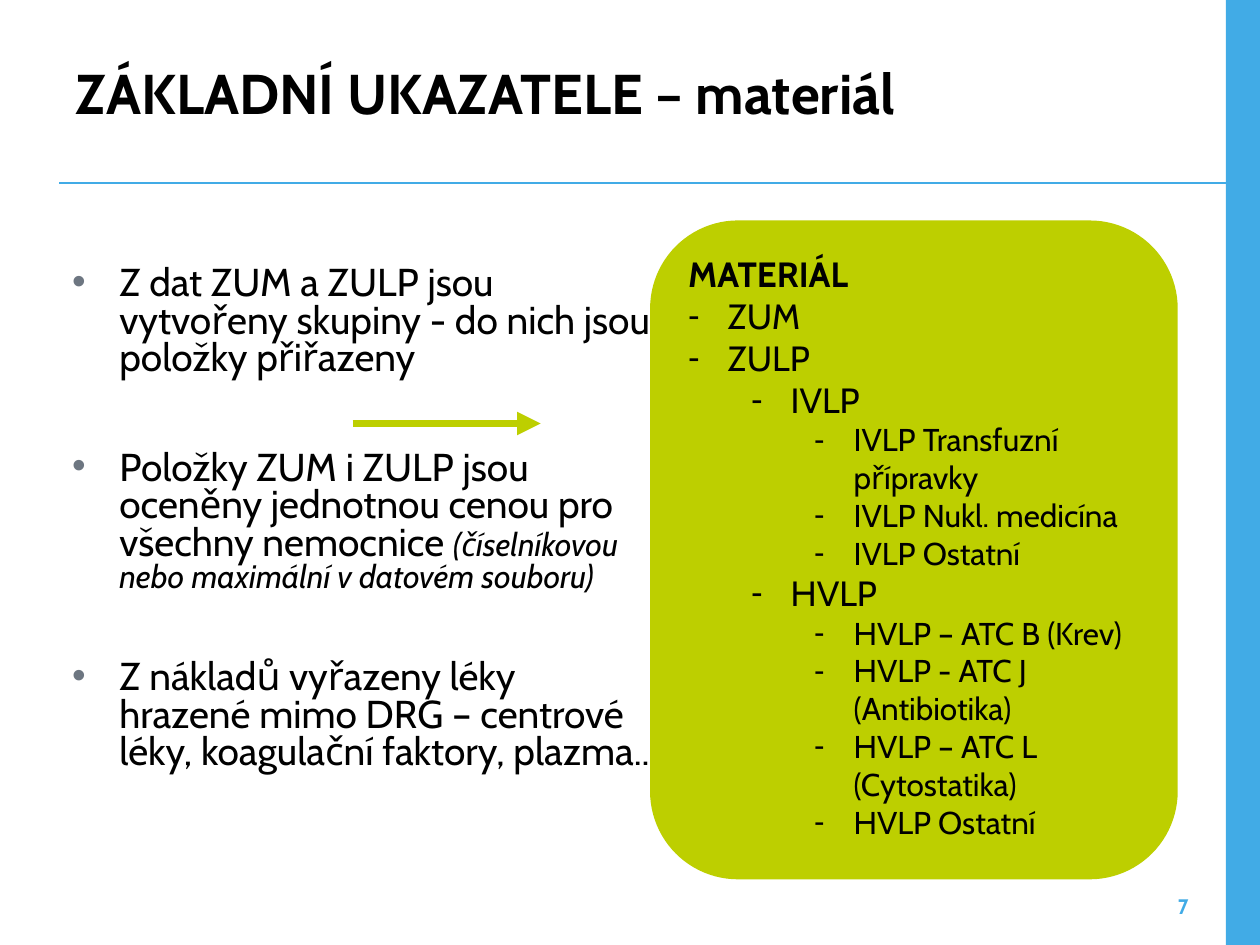
from dataclasses import dataclass

from lxml.etree import SubElement
from pptx import Presentation
from pptx.dml.color import RGBColor
from pptx.enum.shapes import MSO_CONNECTOR, MSO_SHAPE
from pptx.enum.text import MSO_ANCHOR, MSO_AUTO_SIZE, PP_ALIGN
from pptx.oxml.ns import qn
from pptx.util import Pt


@dataclass(frozen=True)
class Theme:
    font: str = "Cabin"
    text: str = "000000"
    accent: str = "41ABE6"
    panel: str = "BDCF00"
    bullet: str = "6D7681"
    title_size: float = 32
    body_size: float = 22.2
    note_size: float = 18.5
    panel_size: float = 20
    detail_size: float = 18
    number_size: float = 12


@dataclass(frozen=True)
class Box:
    left: float
    top: float
    width: float
    height: float

    def lengths(self):
        return Pt(self.left), Pt(self.top), Pt(self.width), Pt(self.height)


THEME = Theme()

BODY_ITEMS = [
    (0, [("Z dat ZUM a ZULP jsou vytvořeny skupiny - do nich jsou položky přiřazeny", False)]),
    (41.5, [("Položky ZUM i ZULP jsou oceněny jednotnou cenou pro všechny nemocnice ", False),
            ("(číselníkovou nebo maximální v datovém souboru)", True)]),
    (38, [("Z nákladů vyřazeny léky hrazené mimo DRG – centrové léky, koagulační faktory, plazma..", False)]),
]

MATERIAL_ITEMS = [
    (0, "ZUM"),
    (0, "ZULP"),
    (1, "IVLP"),
    (2, "IVLP Transfuzní přípravky"),
    (2, "IVLP Nukl. medicína"),
    (2, "IVLP Ostatní"),
    (1, "HVLP"),
    (2, "HVLP – ATC B (Krev)"),
    (2, "HVLP - ATC J (Antibiotika)"),
    (2, "HVLP – ATC L (Cytostatika)"),
    (2, "HVLP Ostatní"),
]


def color(value):
    return RGBColor.from_string(value)


def place(shape, box):
    shape.left, shape.top, shape.width, shape.height = box.lengths()


def add_run(paragraph, text, size, fill=THEME.text, bold=False, italic=False):
    run = paragraph.add_run()
    run.text = text
    run.font.name = THEME.font
    run.font.size = Pt(size)
    run.font.bold = bold
    run.font.italic = italic
    run.font.color.rgb = color(fill)


def add_bullet(paragraph, character, fill, margin, hanging):
    properties = paragraph._p.get_or_add_pPr()
    properties.set("marL", str(Pt(margin)))
    properties.set("indent", str(-Pt(hanging)))
    bullet_color = SubElement(properties, qn("a:buClr"))
    SubElement(bullet_color, qn("a:srgbClr"), val=fill)
    SubElement(properties, qn("a:buFont"), typeface="Arial")
    SubElement(properties, qn("a:buChar"), char=character)


def next_paragraph(frame, index):
    return frame.add_paragraph() if index else frame.paragraphs[0]


def add_line(slide, left, right, y, fill, width):
    line = slide.shapes.add_connector(MSO_CONNECTOR.STRAIGHT, Pt(left), Pt(y), Pt(right), Pt(y))
    line.line.color.rgb = color(fill)
    line.line.width = Pt(width)
    SubElement(line._element.spPr, qn("a:effectLst"))
    return line


def add_filled_shape(slide, kind, box, fill):
    shape = slide.shapes.add_shape(kind, *box.lengths())
    shape.shadow.inherit = False
    shape.fill.solid()
    shape.fill.fore_color.rgb = color(fill)
    shape.line.fill.background()
    return shape


def add_frame(slide, box):
    bar_width = 19.5
    bar_left = box.left + box.width - bar_width
    add_filled_shape(slide, MSO_SHAPE.RECTANGLE, Box(bar_left, box.top, bar_width, box.height), THEME.accent)
    add_line(slide, box.left + 34, bar_left + 2, box.top + 104.5, THEME.accent, 1)


def fill_title(slide, box):
    title = slide.shapes.title
    place(title, box)
    frame = title.text_frame
    frame.auto_size = MSO_AUTO_SIZE.NONE
    frame.vertical_anchor = MSO_ANCHOR.MIDDLE
    paragraph = frame.paragraphs[0]
    paragraph.alignment = PP_ALIGN.LEFT
    paragraph.line_spacing = 0.9
    add_run(paragraph, "ZÁKLADNÍ UKAZATELE – materiál", THEME.title_size, bold=True)


def fill_body(slide, box):
    body = slide.placeholders[1]
    place(body, box)
    frame = body.text_frame
    frame.auto_size = MSO_AUTO_SIZE.NONE
    for index, (space, runs) in enumerate(BODY_ITEMS):
        paragraph = next_paragraph(frame, index)
        add_bullet(paragraph, "•", THEME.bullet, 27, 27)
        paragraph.line_spacing = 0.8
        paragraph.space_before = Pt(space)
        for text, is_note in runs:
            add_run(paragraph, text, THEME.note_size if is_note else THEME.body_size, italic=is_note)


def add_material_panel(slide, box):
    panel = add_filled_shape(slide, MSO_SHAPE.ROUNDED_RECTANGLE, box, THEME.panel)
    frame = panel.text_frame
    frame.word_wrap = True
    frame.vertical_anchor = MSO_ANCHOR.TOP
    heading = frame.paragraphs[0]
    heading.alignment = PP_ALIGN.LEFT
    add_run(heading, "MATERIÁL", THEME.panel_size, bold=True)
    for level, text in MATERIAL_ITEMS:
        paragraph = frame.add_paragraph()
        paragraph.alignment = PP_ALIGN.LEFT
        paragraph.level = level
        add_bullet(paragraph, "-", THEME.text, 22.5 + 36 * level, 22.5)
        add_run(paragraph, text, THEME.detail_size if level == 2 else THEME.panel_size)


def add_arrow(slide, box):
    arrow = add_line(slide, box.left, box.left + box.width, box.top, THEME.panel, 4.5)
    SubElement(arrow.line._get_or_add_ln(), qn("a:tailEnd"), type="triangle")


def add_slide_number(slide, box):
    frame = slide.shapes.add_textbox(*box.lengths()).text_frame
    frame.word_wrap = True
    frame.vertical_anchor = MSO_ANCHOR.BOTTOM
    paragraph = frame.paragraphs[0]
    paragraph.alignment = PP_ALIGN.RIGHT
    add_run(paragraph, "7", THEME.number_size, THEME.accent, bold=True)


def main():
    presentation = Presentation()
    presentation.slide_width, presentation.slide_height = Pt(720), Pt(540)
    slide = presentation.slides.add_slide(presentation.slide_layouts[1])
    add_frame(slide, Box(0, 0, 720, 540))
    fill_title(slide, Box(36, 21.6, 648, 67))
    fill_body(slide, Box(34, 149, 346.5, 355.5))
    add_slide_number(slide, Box(607, 500.4, 79.2, 28))
    add_material_panel(slide, Box(371.5, 126, 301.5, 376.5))
    add_arrow(slide, Box(201.5, 242, 107.5, 0))
    presentation.save("out.pptx")


if __name__ == "__main__":
    main()
